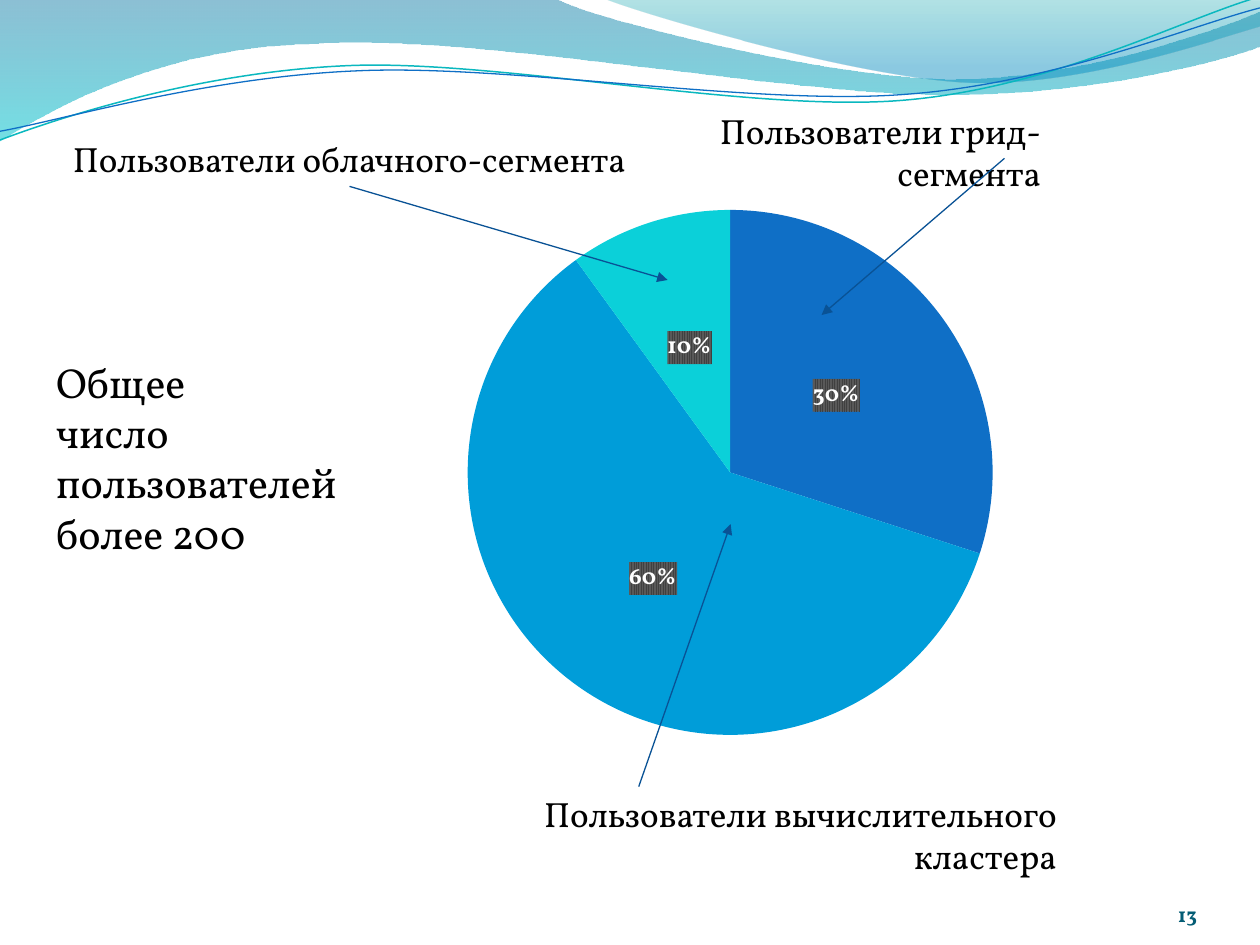
from lxml.etree import SubElement
from pptx import Presentation
from pptx.chart.data import CategoryChartData
from pptx.dml.color import RGBColor
from pptx.enum.chart import XL_CHART_TYPE, XL_LABEL_POSITION
from pptx.enum.lang import MSO_LANGUAGE_ID
from pptx.enum.shapes import MSO_CONNECTOR
from pptx.enum.text import MSO_ANCHOR, MSO_AUTO_SIZE, PP_ALIGN
from pptx.oxml import parse_xml
from pptx.oxml.ns import nsdecls, qn
from pptx.util import Pt

FONT = "Vollkorn"
COLORS = {
    "text": "000000", "number": "045D75", "label": "FFFFFF", "arrow": "095295",
    "grid": "0F6FC6", "cluster": "009DD9", "cloud": "0BD0D9", "teal line": "0AB8BF",
    "wave top": "0074A1", "wave bottom": "00C6CF",
    "crest top": "00A1A9", "crest bottom": "008BBF",
    "hatch": "404040", "hatch back": "595959",
}

# Outlines: a pair is a straight step, a six-number tuple is a Bezier step
WAVES = [
    {"start": (0, 0),
     "steps": [(317, -1), (343, 12, 478, 45, 546, 45), (614, 45, 690, 19, 720, 6.5),
               (721, 26), (708, 32, 626, 55, 537, 54), (448, 54, 275, 20, 185, 24.5),
               (93, 26, 33, 60, -1, 81)],
     "stops": [("wave top", 0, 45), ("wave bottom", 1, 55)]},
    {"start": (345, -1),
     "steps": [(366.5, 8, 491, 44.5, 553.5, 47), (616.5, 49.5, 692, 23, 720, 15),
               (720, 0)],
     "stops": [("crest top", 0, 30), ("crest bottom", 0.8, 45)]},
    {"start": (0, 80),
     "steps": [(34.5, 67, 114, 41, 199.5, 37.5), (284.5, 34, 427, 64, 513.5, 57.5),
               (600, 51, 675.5, 11, 718.5, -1.5)],
     "line": ("teal line", 0.85)},
    {"start": (0, 75),
     "steps": [(34, 69, 118, 44, 204, 40.5), (290, 36.5, 430, 60.5, 516, 54),
               (602, 48, 679, 15, 720, 4.5)],
     "line": ("grid", 0.75)},
]

SHARES = [("1", 30, "grid"), ("2", 60, "cluster"), ("3", 10, "cloud")]
CHART_BOX = (173.5, 110, 487.5, 320)
PIE_DIAMETER = 300

# Text boxes: lines, box, size, alignment, frame settings
CALLOUT = {"word_wrap": False, "auto_size": MSO_AUTO_SIZE.SHAPE_TO_FIT_TEXT}
TEXTS = {
    "grid": (["Пользователи грид-сегмента"], (404.5, 59, 279.5, 31.5), 20,
             PP_ALIGN.RIGHT,
             {"word_wrap": True, "margin_left": Pt(4), "margin_right": Pt(89)}),
    "cloud": (["Пользователи облачного-сегмента"], (34.5, 75, 330.5, 31.5), 20,
              PP_ALIGN.RIGHT, CALLOUT),
    "cluster": (["Пользователи вычислительного кластера"], (220.5, 449.5, 394.5, 31.5),
                20, PP_ALIGN.RIGHT, {**CALLOUT, "margin_right": Pt(11)}),
    "total": (["Общее", "число", "пользователей", "более 200"],
              (25, 200, 175, 124), 24, PP_ALIGN.LEFT, CALLOUT),
    "number": (["13"], (624, 500.5, 60, 29), 12, PP_ALIGN.RIGHT,
               {"word_wrap": True, "vertical_anchor": MSO_ANCHOR.BOTTOM,
                "margin_left": 0, "margin_top": 0, "margin_right": 0,
                "margin_bottom": 0}),
}
ARROWS = {
    "cloud": (200, 106.5, 381.5, 160),
    "grid": (574, 90.5, 469.5, 180),
    "cluster": (365, 449.5, 417.5, 299.5),
}


def color(name):
    return RGBColor.from_string(COLORS[name])


def set_all(target, values):
    for name, value in values.items():
        setattr(target, name, value)


def set_font(font, size, name, bold=False):
    set_all(font, {"name": FONT, "size": Pt(size), "bold": bold})
    font.color.rgb = color(name)


def add_outline(slide, start, steps, close):
    builder = slide.shapes.build_freeform(*map(Pt, start))
    builder.add_line_segments([tuple(map(Pt, step[-2:])) for step in steps], close=close)
    shape = builder.convert_to_shape()
    # Turn the straight steps with control points into curves
    for element, step in zip(list(shape._element.iter(qn("a:lnTo"))), steps):
        if len(step) == 6:
            element.tag = qn("a:cubicBezTo")
            for index in (0, 2):
                point = SubElement(element, qn("a:pt"), x=str(Pt(step[index]) - shape.left),
                                   y=str(Pt(step[index + 1]) - shape.top))
                element.insert(index // 2, point)
    return shape


def add_wave(slide, wave):
    shape = add_outline(slide, wave["start"], wave["steps"], "stops" in wave)
    shape.shadow.inherit = False
    if "line" in wave:
        name, width = wave["line"]
        shape.fill.background()
        shape.line.color.rgb = color(name)
        shape.line.width = Pt(width)
        return
    shape.line.fill.background()
    shape.fill.gradient()
    shape.fill.gradient_angle = 270
    for stop, (name, position, _) in zip(shape.fill.gradient_stops, wave["stops"]):
        stop.color.rgb = color(name)
        stop.position = position
    for element, (_, _, opacity) in zip(shape._element.iter(qn("a:srgbClr")), wave["stops"]):
        SubElement(element, qn("a:alpha"), val=str(opacity * 1000))


def add_pie(slide):
    data = CategoryChartData()
    data.categories = [category for category, _, _ in SHARES]
    data.add_series("Series 1", [value for _, value, _ in SHARES])
    chart = slide.shapes.add_chart(XL_CHART_TYPE.PIE, *map(Pt, CHART_BOX), data).chart
    set_all(chart, {"has_legend": False, "has_title": False})
    set_font(chart.font, 10, "text")
    plot = chart.plots[0]
    plot.vary_by_categories = True
    for index, (_, _, name) in enumerate(SHARES):
        fill = plot.series[0].points[index].format.fill
        fill.solid()
        fill.fore_color.rgb = color(name)

    # Percent labels on a hatched ground
    labels = plot.series[0].data_labels
    set_all(labels, {"show_percentage": True, "show_value": False,
                     "number_format": "0%", "number_format_is_linked": False,
                     "position": XL_LABEL_POSITION.CENTER})
    set_font(labels.font, 13.3, "label", bold=True)
    labels._element.find(qn("c:txPr")).addprevious(parse_xml(
        f'<c:spPr {nsdecls("c", "a")}><a:pattFill prst="ltVert">'
        f'<a:fgClr><a:srgbClr val="{COLORS["hatch"]}"/></a:fgClr>'
        f'<a:bgClr><a:srgbClr val="{COLORS["hatch back"]}"/></a:bgClr>'
        '</a:pattFill></c:spPr>'))

    # Centred plot area of fixed diameter
    width, height = (PIE_DIAMETER / side for side in CHART_BOX[2:])
    area = chart._chartSpace.chart.plotArea
    for layout in area.findall(qn("c:layout")):
        area.remove(layout)
    values = {"x": (1 - width) / 2, "y": (1 - height) / 2, "w": width, "h": height}
    parts = "".join(f'<c:{key} val="{value:.4f}"/>' for key, value in values.items())
    area.insert(0, parse_xml(
        f'<c:layout {nsdecls("c")}><c:manualLayout><c:layoutTarget val="inner"/>'
        f'<c:xMode val="edge"/><c:yMode val="edge"/>{parts}</c:manualLayout></c:layout>'))


def add_text(slide, name):
    lines, box, size, alignment, settings = TEXTS[name]
    shape = slide.shapes.add_textbox(*map(Pt, box))
    frame = shape.text_frame
    set_all(frame, settings)
    frame.text = "\n".join(lines)
    for paragraph in frame.paragraphs:
        paragraph.alignment = alignment
        font = paragraph.runs[0].font
        font.language_id = MSO_LANGUAGE_ID.RUSSIAN
        set_font(font, size, "number" if name == "number" else "text",
                 bold=name == "number")
    return shape


def add_arrow(slide, ends):
    arrow = slide.shapes.add_connector(MSO_CONNECTOR.STRAIGHT, *map(Pt, ends))
    arrow.line.color.rgb = color("arrow")
    arrow.line.width = Pt(0.75)
    SubElement(arrow.line._get_or_add_ln(), qn("a:tailEnd"), type="triangle")
    SubElement(arrow._element.spPr, qn("a:effectLst"))
    return arrow


def main():
    presentation = Presentation()
    set_all(presentation, {"slide_width": Pt(720), "slide_height": Pt(540)})
    slide = presentation.slides.add_slide(presentation.slide_layouts[6])
    for wave in WAVES:
        add_wave(slide, wave)
    add_text(slide, "number")
    add_pie(slide)
    callouts = {name: add_text(slide, name) for name in ("grid", "cloud", "cluster")}
    arrows = {name: add_arrow(slide, ends) for name, ends in ARROWS.items()}
    arrows["cloud"].begin_connect(callouts["cloud"], 2)
    add_text(slide, "total")
    presentation.save("out.pptx")


if __name__ == "__main__":
    main()
